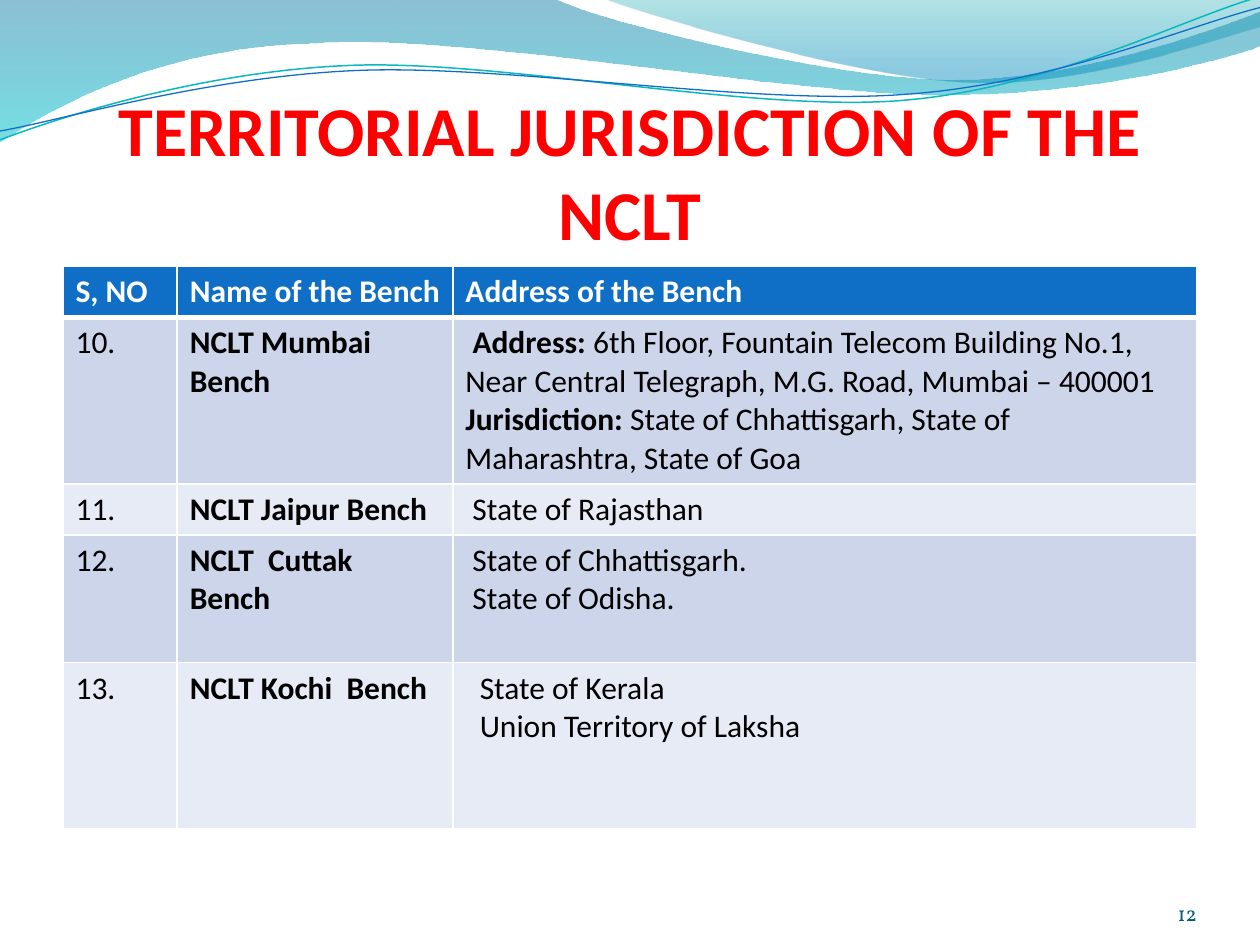
from lxml.etree import SubElement, fromstring
from pptx import Presentation
from pptx.dml.color import RGBColor
from pptx.enum.text import MSO_ANCHOR as ANCHOR, PP_ALIGN as ALIGN
from pptx.oxml.ns import nsdecls, qn
from pptx.oxml.xmlchemy import OxmlElement
from pptx.util import Pt

COLORS = {
    "title": "FF0000", "number": "045D75", "header": "0F6FC6",
    "band_dark": "CCD5EA", "band_light": "E7EBF5",
    "white": "FFFFFF", "black": "000000",
    "wave_top": "0074A1", "wave_bottom": "00C6CF",
    "crest_top": "00A1A9", "crest_bottom": "008BBF",
    "teal_line": "0AB8BF", "blue_line": "0F6FC6",
}
HEADER = ["S, NO", "Name of the Bench", "Address of the Bench"]
# Number, bench, left margin of the address cell, address paragraphs of (text, bold)
BENCHES = [
    ("10.", "NCLT Mumbai Bench", 7.2, [[
        (" Address:", True),
        (" 6th Floor, Fountain Telecom Building No.1, Near Central Telegraph, "
         "M.G. Road, Mumbai – 400001", False),
        ("\n", False),
        ("Jurisdiction:", True),
        (" State of Chhattisgarh, State of Maharashtra, State of Goa", False)]]),
    ("11.", "NCLT Jaipur Bench", 11.2, [[("State of Rajasthan", False)]]),
    ("12.", "NCLT  Cuttak Bench", 11.2,
     [[("State of Chhattisgarh.", False)], [("State of Odisha.", False)]]),
    ("13.", "NCLT Kochi  Bench", 15.4,
     [[("State of Kerala", False)], [("Union Territory of Laksha", False)]]),
]
COL_WIDTHS = [65.3, 157.5, 425.2]
ROW_HEIGHTS = [29.2, 95, 29.2, 73, 95]


def rgb(name):
    return RGBColor.from_string(COLORS[name])


def write(p, text, size=18, font="Calibri", color="black", bold=False):
    """Add one formatted run; a newline becomes a line break."""
    if text == "\n":
        p.add_line_break()
        return
    r = p.add_run()
    r.text = text
    r.font.size, r.font.name, r.font.bold = Pt(size), font, bold
    r.font.color.rgb = rgb(color)


def add_text(s, box, text, align, inset_top=0, **fmt):
    tf = s.shapes.add_textbox(*map(Pt, box)).text_frame
    tf.word_wrap, tf.vertical_anchor = True, ANCHOR.BOTTOM
    tf.margin_left = tf.margin_right = tf.margin_bottom = 0
    tf.margin_top = Pt(inset_top)
    tf.paragraphs[0].alignment = align
    write(tf.paragraphs[0], text, **fmt)


def add_outline(s, start, parts, closed):
    """Draw parts in turn: one point is a line, three points are a cubic curve."""
    to_emu = lambda point: tuple(Pt(72 * v) for v in point)
    builder = s.shapes.build_freeform(*to_emu(start))
    builder.add_line_segments([to_emu(pt) for part in parts for pt in part], close=closed)
    sp = builder.convert_to_shape()
    sp.shadow.inherit = False
    lines = iter(list(sp._element.iter(qn("a:lnTo"))))
    for part in parts:
        segment = [next(lines) for _ in part]
        if len(part) == 3:
            curve = OxmlElement("a:cubicBezTo")
            segment[0].addprevious(curve)
            for line in segment:
                curve.append(line[0])
                line.getparent().remove(line)
    return sp


def add_wave(s, start, parts, stops):
    """Draw a filled wave; stops are (position, colour, opacity %), top to bottom."""
    sp = add_outline(s, start, parts, True)
    sp.line.fill.background()
    sp.fill.gradient()
    sp.fill.gradient_angle = 270
    for stop, (position, color, _) in zip(sp.fill.gradient_stops, stops):
        stop.position, stop.color.rgb = position, rgb(color)
    grad = sp._element.spPr.find(qn("a:gradFill"))
    for clr, (_, _, opacity) in zip(grad.iter(qn("a:srgbClr")), stops):
        SubElement(clr, qn("a:alpha")).set("val", str(opacity * 1000))


def add_ripple(s, start, parts, color, width):
    sp = add_outline(s, start, parts, False)
    sp.fill.background()
    sp.line.color.rgb, sp.line.width = rgb(color), Pt(width)


def style_cell(cell, fill, bottom=1):
    cell.fill.solid()
    cell.fill.fore_color.rgb = rgb(fill)
    tc_pr = cell._tc.get_or_add_tcPr()
    for i, (side, width) in enumerate(zip("LRTB", (1, 1, 1, bottom))):
        tc_pr.insert(i, fromstring(
            f'<a:ln{side} {nsdecls("a")} w="{Pt(width)}"><a:solidFill>'
            f'<a:srgbClr val="{COLORS["white"]}"/></a:solidFill></a:ln{side}>'))


def fill_cell(cell, paragraphs, color="black"):
    tf = cell.text_frame
    for i, runs in enumerate(paragraphs):
        p = tf.add_paragraph() if i else tf.paragraphs[0]
        for text, bold in runs:
            write(p, text, color=color, bold=bold)


def add_bench_table(s):
    table = s.shapes.add_table(
        len(ROW_HEIGHTS), len(COL_WIDTHS), Pt(36), Pt(152.3),
        Pt(sum(COL_WIDTHS)), Pt(sum(ROW_HEIGHTS))).table
    table.horz_banding = False
    for col, width in zip(table.columns, COL_WIDTHS):
        col.width = Pt(width)
    for row, height in zip(table.rows, ROW_HEIGHTS):
        row.height = Pt(height)
    for cell, text in zip(table.rows[0].cells, HEADER):
        style_cell(cell, "header", bottom=3)
        fill_cell(cell, [[(text, True)]], "white")
    for i, (number, bench, margin, address) in enumerate(BENCHES, 1):
        contents = [[[(number, False)]], [[(bench, True)]], address]
        for cell, paragraphs in zip(table.rows[i].cells, contents):
            style_cell(cell, "band_dark" if i % 2 else "band_light")
            fill_cell(cell, paragraphs)
        table.cell(i, 2).margin_left = Pt(margin)


def add_waves(s):
    """Draw the header decoration; path coordinates are in units of 72 points."""
    add_wave(s, (0, 0), [
        [(4.4, -0.01)],
        [(4.76, 0.17), (6.64, 0.63), (7.58, 0.63)],
        [(8.53, 0.63), (9.58, 0.26), (10, 0.09)],
        [(10.01, 0.36)],
        [(9.83, 0.44), (8.7, 0.76), (7.46, 0.75)],
        [(6.22, 0.75), (3.82, 0.28), (2.57, 0.34)],
        [(1.29, 0.36), (0.46, 0.83), (-0.01, 1.13)],
    ], [(0, "wave_top", 45), (1, "wave_bottom", 55)])
    add_wave(s, (4.79, -0.01), [
        [(5.09, 0.11), (6.82, 0.62), (7.69, 0.65)],
        [(8.56, 0.69), (9.61, 0.32), (10, 0.21)],
        [(10, 0)],
    ], [(0, "crest_top", 30), (0.8, "crest_bottom", 45)])
    add_ripple(s, (0, 1.11), [
        [(0.48, 0.93), (1.58, 0.57), (2.77, 0.52)],
        [(3.95, 0.47), (5.93, 0.89), (7.13, 0.8)],
        [(8.33, 0.71), (9.38, 0.15), (9.98, -0.02)],
    ], "teal_line", 0.85)
    add_ripple(s, (0, 1.04), [
        [(0.47, 0.96), (1.64, 0.61), (2.83, 0.56)],
        [(4.03, 0.51), (5.97, 0.84), (7.17, 0.75)],
        [(8.36, 0.67), (9.41, 0.21), (10, 0.06)],
    ], "blue_line", 0.75)


def main():
    prs = Presentation()
    prs.slide_width, prs.slide_height = Pt(720), Pt(540)
    s = prs.slides.add_slide(prs.slide_layouts[6])
    add_waves(s)
    add_text(s, (36, 55.4, 648, 90), "TERRITORIAL JURISDICTION OF THE NCLT",
             ALIGN.CENTER, inset_top=3.6, size=40, color="title", bold=True)
    add_bench_table(s)
    add_text(s, (624, 500.2, 60, 28.8), "12", ALIGN.RIGHT,
             size=12, font="Vollkorn", color="number")
    prs.save("out.pptx")


if __name__ == "__main__":
    main()
